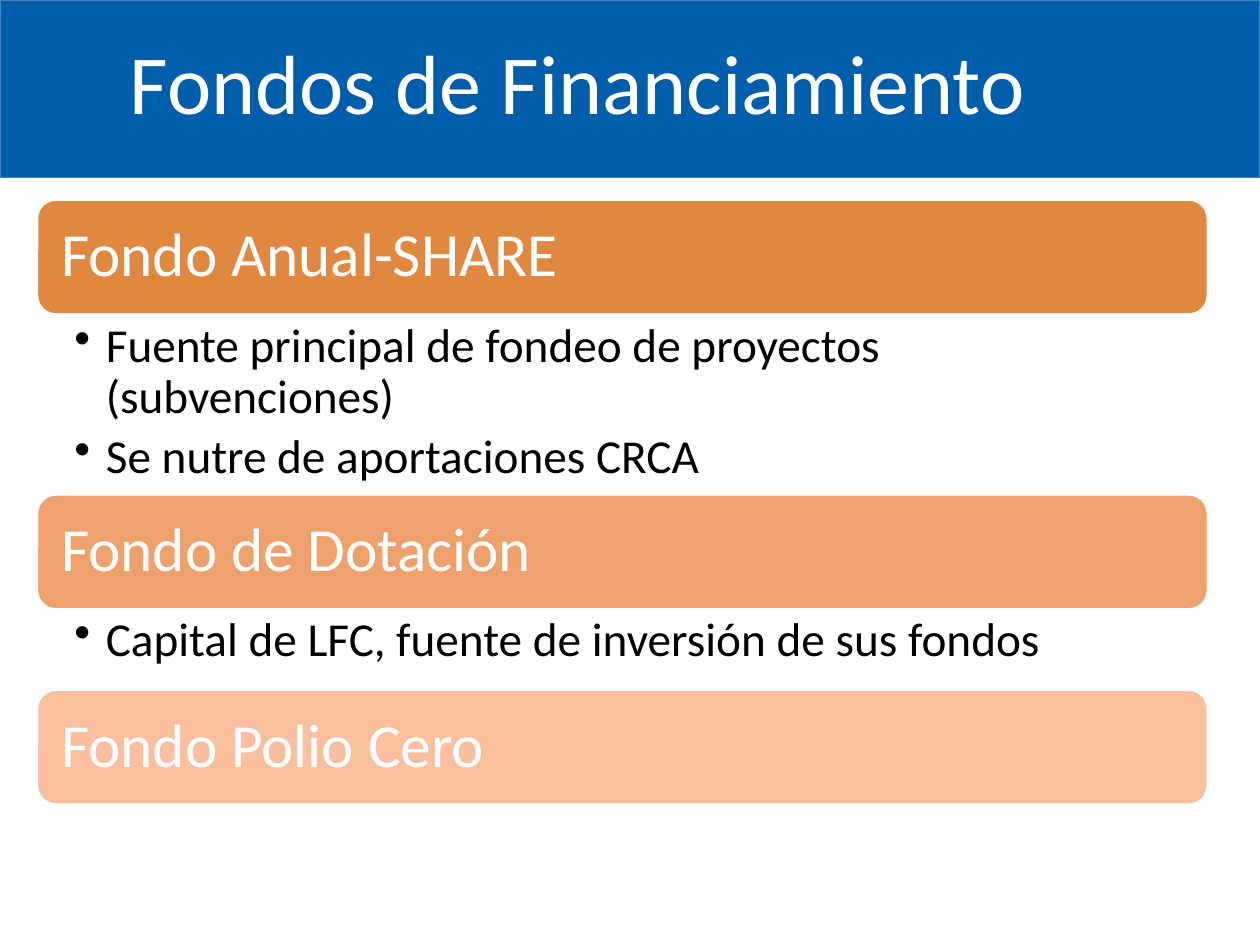
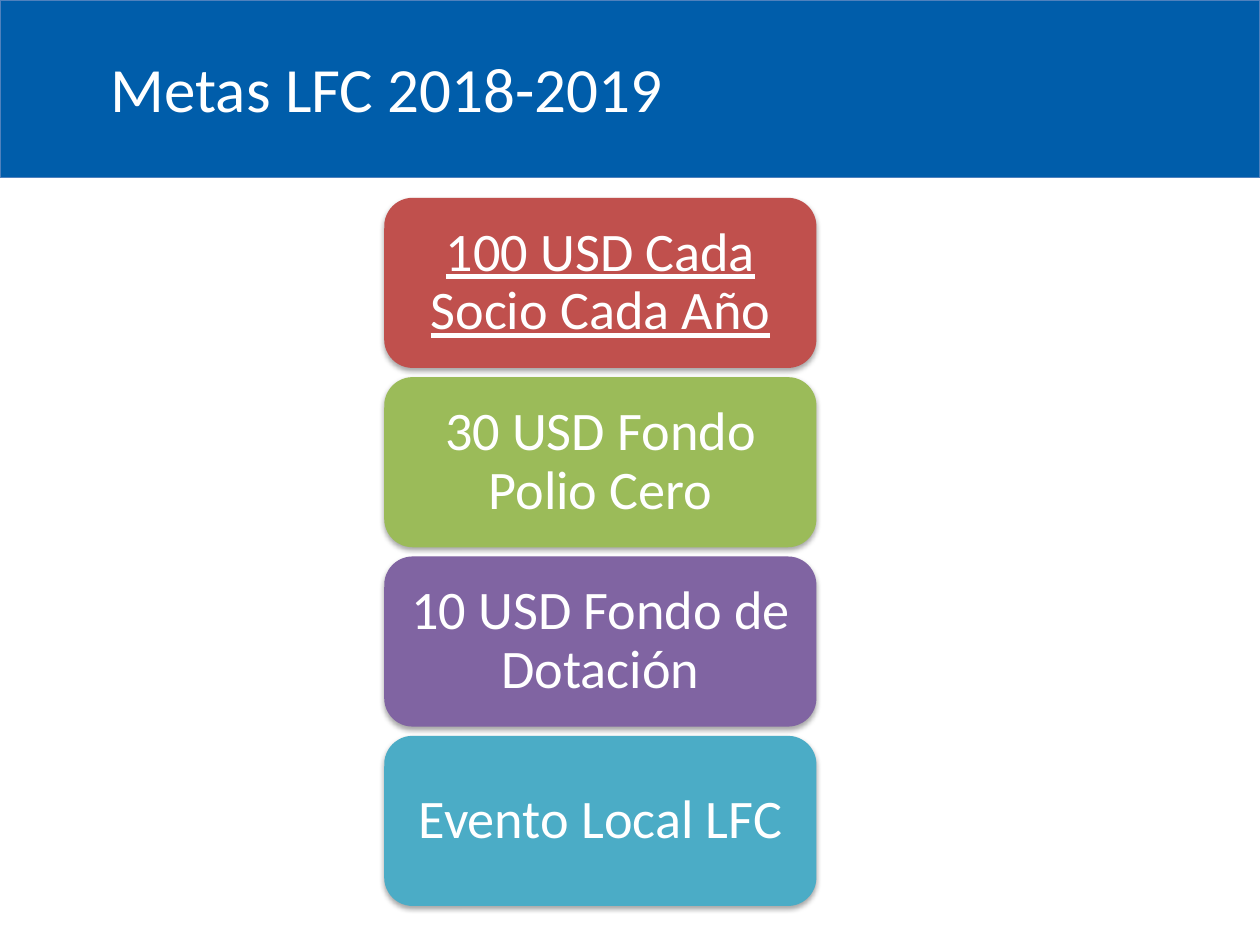
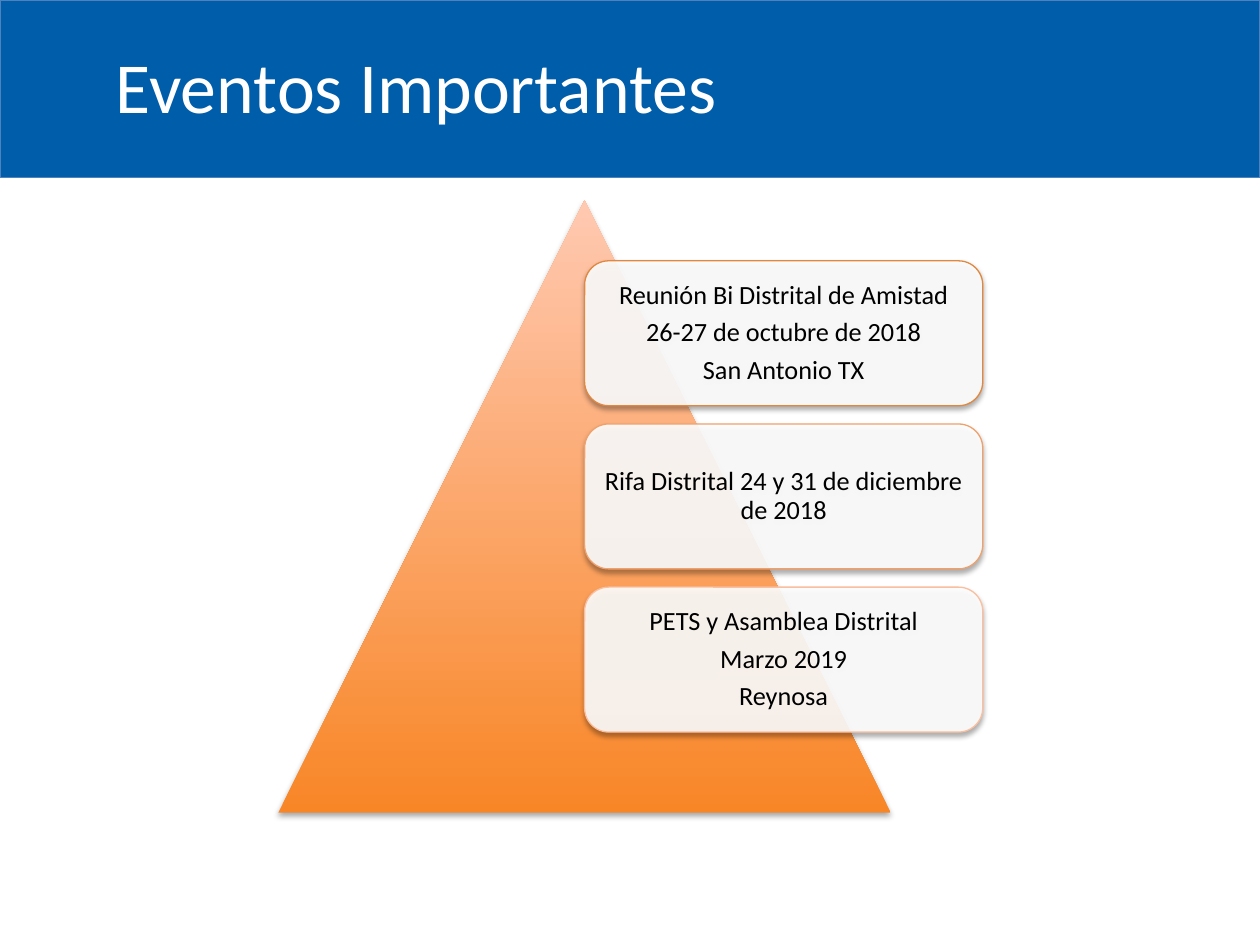
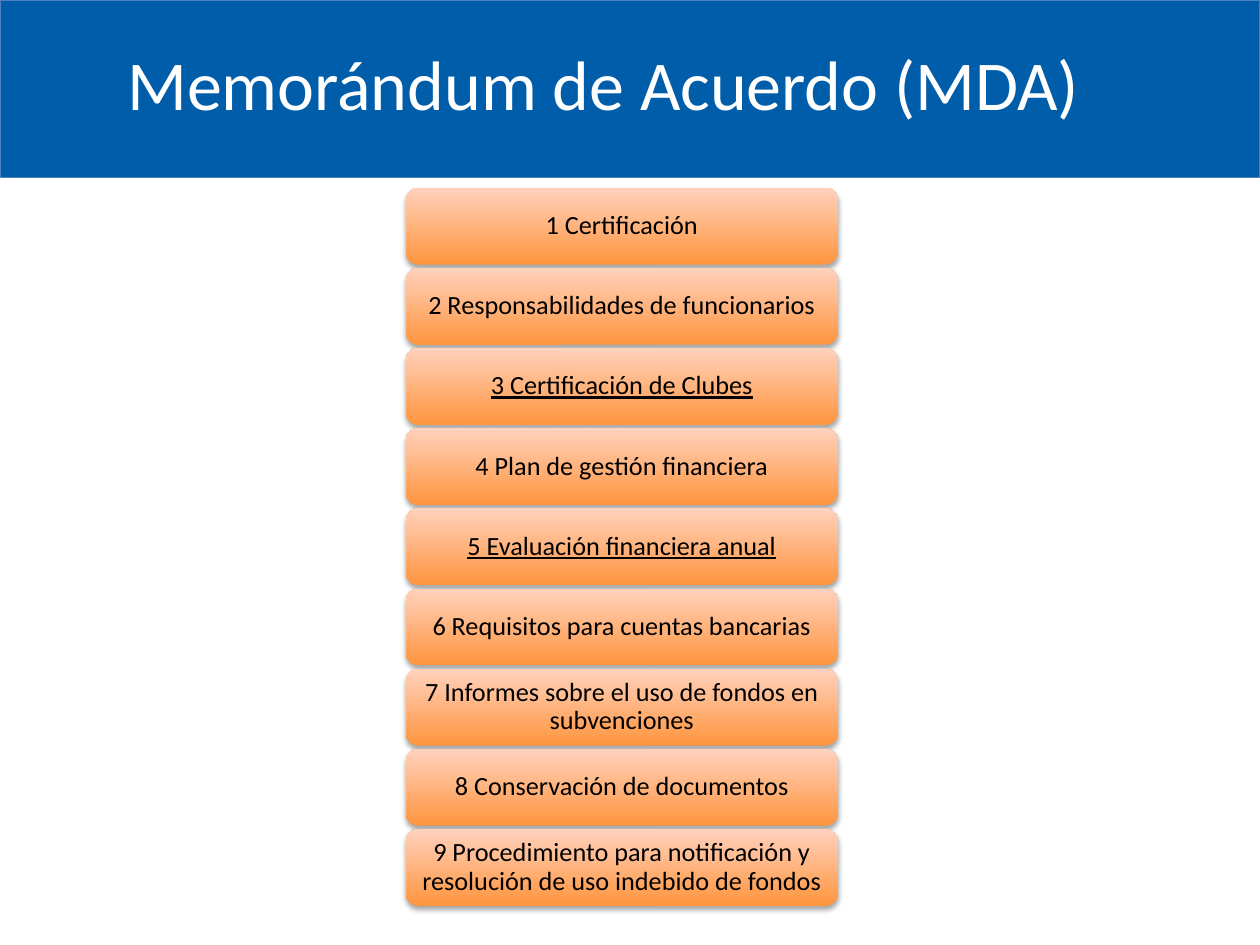
"""Build four slides on funds, goals, events and the memorandum of agreement."""
from dataclasses import dataclass
from typing import Optional, Sequence

from lxml.etree import SubElement
from pptx import Presentation
from pptx.dml.color import RGBColor
from pptx.enum.shapes import MSO_SHAPE as Preset
from pptx.enum.text import MSO_ANCHOR as Anchor, PP_ALIGN as Align
from pptx.oxml.ns import qn
from pptx.shapes.autoshape import Shape
from pptx.slide import Slide
from pptx.util import Inches, Pt

FONT = "Calibri"
WHITE = RGBColor(0xFF, 0xFF, 0xFF)
BLACK = RGBColor(0x00, 0x00, 0x00)
BAND_BLUE = RGBColor(0x00, 0x5D, 0xAA)
BAND_EDGE = RGBColor(0x4F, 0x81, 0xBD)
RED = RGBColor(0xC0, 0x50, 0x4D)
GREEN = RGBColor(0x9B, 0xBB, 0x59)
PURPLE = RGBColor(0x80, 0x64, 0xA2)
TEAL = RGBColor(0x4B, 0xAC, 0xC6)
ORANGES = (
    RGBColor(0xE0, 0x88, 0x40),
    RGBColor(0xEF, 0xA1, 0x6D),
    RGBColor(0xFA, 0xBF, 0x9F),
)
PYRAMID_FADE = (RGBColor(0xF8, 0x86, 0x27), RGBColor(0xFF, 0xC9, 0xB1))
STEP_FADE = (RGBColor(0xFF, 0x95, 0x3E), RGBColor(0xFF, 0xD2, 0xBD))


@dataclass(frozen=True)
class Box:
    """Place and size in inches."""

    left: float
    top: float
    width: float
    height: float


@dataclass(frozen=True)
class TextStyle:
    """Look of the text inside a box, with insets in inches."""

    size: float
    color: RGBColor
    insets: tuple[float, float, float, float]
    align: Align = Align.LEFT
    anchor: Anchor = Anchor.MIDDLE
    after: float = 0.35
    bullet: Optional[str] = None


@dataclass(frozen=True)
class Title:
    """Slide heading with its place, size and inset."""

    text: str
    box: Box
    size: float
    inset: float


@dataclass(frozen=True)
class Fund:
    """Fund heading with the details below it."""

    name: str
    color: RGBColor
    details: tuple[str, ...] = ()
    details_height: float = 0


@dataclass(frozen=True)
class Card:
    """Rounded card in an evenly spaced column."""

    lines: tuple[str, ...]
    fill: Sequence[RGBColor]
    edge: Optional[RGBColor] = None
    opacity: int = 100
    underline: bool = False


FUND_NAME = TextStyle(35, WHITE, (0.15, 0.15, 0.15, 0.15))
FUND_DETAIL = TextStyle(
    27, BLACK, (0.3, 0.05, 0.27, 0.05), anchor=Anchor.TOP, after=0.2, bullet="•"
)
GOAL = TextStyle(31, WHITE, (0.13, 0.06, 0.13, 0.06), Align.CENTER)
EVENT = TextStyle(15, BLACK, (0.06, 0.06, 0.06, 0.06), Align.CENTER)
STEP = TextStyle(15, BLACK, (0.06, 0.03, 0.06, 0.03), Align.CENTER)

FUNDS = (
    Fund(
        "Fondo Anual-SHARE",
        ORANGES[0],
        (
            "Fuente principal de fondeo de proyectos (subvenciones)",
            "Se nutre de aportaciones CRCA",
        ),
        1.42,
    ),
    Fund(
        "Fondo de Dotación",
        ORANGES[1],
        ("Capital de LFC, fuente de inversión de sus fondos",),
        0.63,
    ),
    Fund("Fondo Polio Cero", ORANGES[2]),
)
GOALS = (
    Card(("100 USD Cada Socio Cada Año",), [RED], underline=True),
    Card(("30 USD Fondo Polio Cero",), [GREEN]),
    Card(("10 USD Fondo de Dotación",), [PURPLE]),
    Card(("Evento Local LFC",), [TEAL]),
)
EVENTS = (
    ("Reunión Bi Distrital de Amistad", "26-27 de octubre de 2018", "San Antonio TX"),
    ("Rifa Distrital 24 y 31 de diciembre de 2018",),
    ("PETS y Asamblea Distrital", "Marzo 2019", "Reynosa"),
)
STEPS = (
    "Certificación",
    "Responsabilidades de funcionarios",
    "Certificación de Clubes",
    "Plan de gestión financiera",
    "Evaluación financiera anual",
    "Requisitos para cuentas bancarias",
    "Informes sobre el uso de fondos en subvenciones",
    "Conservación de documentos",
    "Procedimiento para notificación y resolución de uso indebido de fondos",
)
KEY_STEPS = (3, 5)


def emu(box: Box) -> tuple[Inches, ...]:
    """Turn a box into lengths for the shape calls."""
    return tuple(Inches(v) for v in (box.left, box.top, box.width, box.height))


def write(
    shape: Shape, lines: Sequence[str], style: TextStyle, underline: bool = False
) -> None:
    """Fill a shape with one paragraph per line."""
    frame = shape.text_frame
    frame.word_wrap = True
    frame.vertical_anchor = style.anchor
    (frame.margin_left, frame.margin_top, frame.margin_right, frame.margin_bottom) = (
        Inches(inset) for inset in style.insets
    )
    for index, line in enumerate(lines):
        paragraph = frame.add_paragraph() if index else frame.paragraphs[0]
        paragraph.alignment = style.align
        paragraph.line_spacing = 0.9
        paragraph.space_after = Pt(style.after * style.size)
        if style.bullet:
            paragraph.level = 1
            properties = paragraph._p.get_or_add_pPr()
            properties.set("marL", str(Inches(0.25)))
            properties.set("indent", str(Inches(-0.25)))
            SubElement(properties, qn("a:buChar"), char=style.bullet)
        run = paragraph.add_run()
        run.text = line
        run.font.name = FONT
        run.font.size = Pt(style.size)
        run.font.color.rgb = style.color
        if underline:
            run.font.underline = True


def add_text(slide: Slide, box: Box, lines: Sequence[str], style: TextStyle) -> None:
    """Add a plain text box."""
    write(slide.shapes.add_textbox(*emu(box)), lines, style)


def add_panel(
    slide: Slide,
    preset: Preset,
    box: Box,
    colors: Sequence[RGBColor],
    edge: Optional[RGBColor] = None,
    edge_width: float = 0.75,
    shadow: bool = False,
) -> Shape:
    """Add a shape with one fill colour, or two fading from the bottom up."""
    panel = slide.shapes.add_shape(preset, *emu(box))
    if len(colors) == 1:
        panel.fill.solid()
        panel.fill.fore_color.rgb = colors[0]
    else:
        panel.fill.gradient()
        panel.fill.gradient_angle = 90
        for stop, color in zip(panel.fill.gradient_stops, colors):
            stop.color.rgb = color
    if edge is None:
        panel.line.fill.background()
    else:
        panel.line.color.rgb = edge
        panel.line.width = Pt(edge_width)
    panel.shadow.inherit = False
    if shadow:
        add_shadow(panel)
    return panel


def add_shadow(panel: Shape) -> None:
    """Cast a soft shadow straight down."""
    effects = panel._element.spPr.find(qn("a:effectLst"))
    outer = SubElement(
        effects,
        qn("a:outerShdw"),
        blurRad=str(Pt(3.1)),
        dist=str(Pt(1.8)),
        dir="5400000",
        rotWithShape="0",
    )
    tint = SubElement(outer, qn("a:srgbClr"), val=str(BLACK))
    SubElement(tint, qn("a:alpha"), val="35000")


def add_column(
    slide: Slide, first: Box, bottom: float, cards: Sequence[Card], style: TextStyle
) -> None:
    """Spread cards evenly from the first box down to the bottom."""
    pitch = (bottom - first.top - first.height) / (len(cards) - 1)
    for index, card in enumerate(cards):
        box = Box(first.left, first.top + index * pitch, first.width, first.height)
        panel = add_panel(
            slide, Preset.ROUNDED_RECTANGLE, box, card.fill, card.edge, shadow=True
        )
        if card.opacity < 100:
            tint = panel._element.spPr.find(qn("a:solidFill"))[0]
            SubElement(tint, qn("a:alpha"), val=str(card.opacity * 1000))
        write(panel, card.lines, style, card.underline)


def start_slide(deck: Presentation, title: Title) -> Slide:
    """Add a slide with the blue band and its title."""
    slide = deck.slides.add_slide(deck.slide_layouts[6])
    add_panel(slide, Preset.RECTANGLE, Box(0, 0, 10, 1.41), [BAND_BLUE], BAND_EDGE)
    style = TextStyle(title.size, WHITE, (title.inset,) * 4)
    add_text(slide, title.box, [title.text], style)
    return slide


def build_funds(deck: Presentation) -> None:
    """Stack the funds with their details."""
    title = Title("Fondos de Financiamiento", Box(0.83, 0.2, 8.52, 0.98), 48, 0.2)
    slide = start_slide(deck, title)
    left, top, width, height = 0.29, 1.58, 9.3, 0.92
    for fund in FUNDS:
        heading = add_panel(
            slide,
            Preset.ROUNDED_RECTANGLE,
            Box(left, top, width, height),
            [fund.color],
            WHITE,
            2,
        )
        write(heading, [fund.name], FUND_NAME)
        top += height
        if fund.details:
            details_box = Box(left, top, width, fund.details_height)
            add_text(slide, details_box, fund.details, FUND_DETAIL)
            top += fund.details_height


def build_goals(deck: Presentation) -> None:
    """Show the yearly goals in a column."""
    title = Title("Metas LFC 2018-2019", Box(0.73, 0.35, 8.54, 0.76), 36, 0.15)
    slide = start_slide(deck, title)
    add_column(slide, Box(3.05, 1.57, 3.43, 1.35), 7.19, GOALS, GOAL)


def build_events(deck: Presentation) -> None:
    """Lay the event cards over a pyramid."""
    title = Title("Eventos Importantes", Box(0.75, 0.23, 8.52, 0.97), 41, 0.17)
    slide = start_slide(deck, title)
    pyramid = Box(2.21, 1.59, 4.86, 4.86)
    add_panel(slide, Preset.ISOSCELES_TRIANGLE, pyramid, PYRAMID_FADE, shadow=True)
    cards = [
        Card(lines, [WHITE], edge, opacity=90) for lines, edge in zip(EVENTS, ORANGES)
    ]
    add_column(slide, Box(4.64, 2.07, 3.16, 1.15), 5.81, cards, EVENT)


def build_memorandum(deck: Presentation) -> None:
    """List the numbered parts of the memorandum."""
    title = Title("Memorándum de Acuerdo (MDA)", Box(0.84, 0.35, 8.55, 0.69), 40, 0.17)
    slide = start_slide(deck, title)
    cards = [
        Card((f"{number} {step}",), STEP_FADE, underline=number in KEY_STEPS)
        for number, step in enumerate(STEPS, start=1)
    ]
    add_column(slide, Box(3.22, 1.49, 3.43, 0.61), 7.19, cards, STEP)


def main() -> None:
    """Build and save the deck."""
    deck = Presentation()
    deck.slide_width, deck.slide_height = Inches(10), Inches(7.5)
    for build in (build_funds, build_goals, build_events, build_memorandum):
        build(deck)
    deck.save("out.pptx")


if __name__ == "__main__":
    main()
